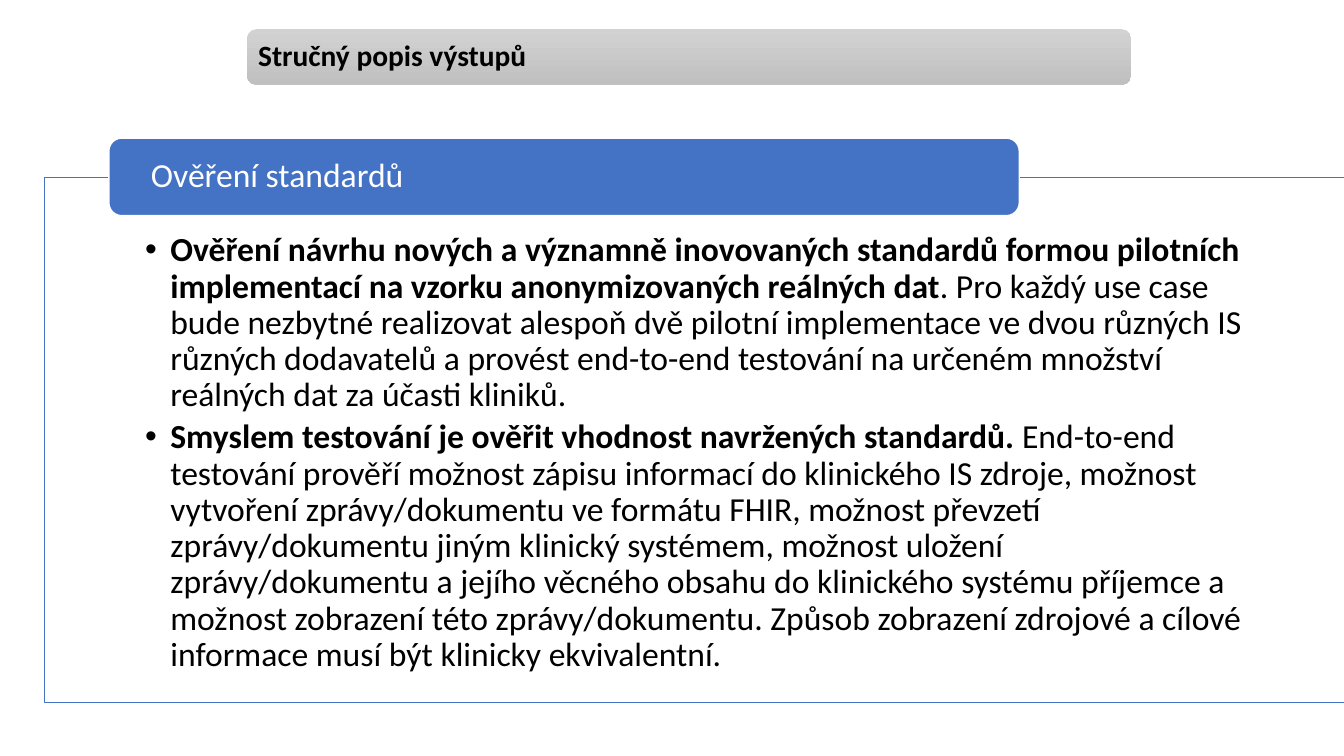
from lxml.etree import SubElement
from pptx import Presentation
from pptx.dml.color import RGBColor
from pptx.enum.shapes import MSO_SHAPE
from pptx.enum.text import MSO_ANCHOR, MSO_AUTO_SIZE, PP_ALIGN
from pptx.oxml.ns import qn
from pptx.util import Inches, Pt

COLORS = {
    "blue": "4472C4",
    "white": "FFFFFF",
    "black": "000000",
    "top": "D2D2D2",
    "base": "C0C0C0",
}
RGB = {name: RGBColor.from_string(code) for name, code in COLORS.items()}


def add_box(kind, place, fill=None, line=None):
    box = slide.shapes.add_shape(kind, *[Inches(v) for v in place])
    box.shadow.inherit = False
    if fill:
        box.fill.solid()
        box.fill.fore_color.rgb = RGB[fill]
    if line:
        box.line.color.rgb = RGB[line]
        box.line.width = Pt(1)
    else:
        box.line.fill.background()
    return box


def set_text(shape, insets, anchor, paras, size, color):
    frame = shape.text_frame
    frame.word_wrap = True
    frame.auto_size = MSO_AUTO_SIZE.NONE
    frame.vertical_anchor = anchor
    (frame.margin_left, frame.margin_top,
     frame.margin_right, frame.margin_bottom) = [Inches(v) for v in insets]
    for i, runs in enumerate(paras):
        para = frame.add_paragraph() if i else frame.paragraphs[0]
        para.alignment = PP_ALIGN.LEFT
        para.line_spacing = 0.9
        for words, bold in runs:
            run = para.add_run()
            run.text = words
            run.font.name = "Calibri"
            run.font.size = Pt(size)
            run.font.bold = bold
            run.font.color.rgb = RGB[color]


prs = Presentation()
prs.slide_width, prs.slide_height = Inches(13.33), Inches(7.5)
slide = prs.slides.add_slide(prs.slide_layouts[5])

# Framed panel with bullets
points = [
    [("Ověření návrhu nových a významně inovovaných standardů formou pilotních "
      "implementací na vzorku anonymizovaných reálných dat", True),
     (". Pro každý use case bude nezbytné realizovat alespoň dvě pilotní "
      "implementace ve dvou různých IS různých dodavatelů a provést end-to-end "
      "testování na určeném množství reálných dat za účasti kliniků.", False)],
    [("Smyslem testování je ověřit vhodnost navržených standardů. ", True),
     ("End-to-end testování prověří možnost zápisu informací do klinického IS "
      "zdroje, možnost vytvoření zprávy/dokumentu ve formátu FHIR, možnost "
      "převzetí zprávy/dokumentu jiným klinický systémem, možnost uložení "
      "zprávy/dokumentu a jejího věcného obsahu do klinického systému příjemce "
      "a možnost zobrazení této zprávy/dokumentu. Způsob zobrazení zdrojové a "
      "cílové informace musí být klinicky ekvivalentní.", False)],
]
panel = add_box(MSO_SHAPE.RECTANGLE, (0.44, 1.76, 12.9, 5.21), "white", "blue")
set_text(panel, (1, 0.55, 1, 0.19), MSO_ANCHOR.TOP, points, 24, "black")
for para in panel.text_frame.paragraphs:
    para.level = 1
    para.space_after = Pt(4)
    props = para._p.get_or_add_pPr()
    props.set("marL", str(Inches(0.25)))
    props.set("indent", str(-Inches(0.25)))
    SubElement(props, qn("a:buFont")).set("typeface", "Arial")
    SubElement(props, qn("a:buChar")).set("char", "•")

# Panel heading
head = add_box(MSO_SHAPE.ROUNDED_RECTANGLE, (1.08, 1.37, 9.03, 0.77), "blue", "white")
set_text(head, (0.38, 0, 0.38, 0), MSO_ANCHOR.MIDDLE,
         [[("Ověření standardů", False)]], 24, "white")

# Grey title bar
bar = add_box(MSO_SHAPE.ROUNDED_RECTANGLE, (2.45, 0.29, 8.77, 0.55))
bar.fill.gradient()
bar.fill.gradient_angle = 270
for stop, name in zip(bar.fill.gradient_stops, ("top", "base")):
    stop.color.rgb = RGB[name]

# Title, in front of its bar
title = slide.shapes.title
title.left, title.top, title.width, title.height = [
    Inches(v) for v in (2.47, 0.32, 8.72, 0.5)]
set_text(title, (0.09, 0.09, 0.09, 0.09), MSO_ANCHOR.MIDDLE,
         [[("Stručný popis výstupů", True)]], 21, "black")
bar.element.addnext(title.element)

prs.save("out.pptx")
